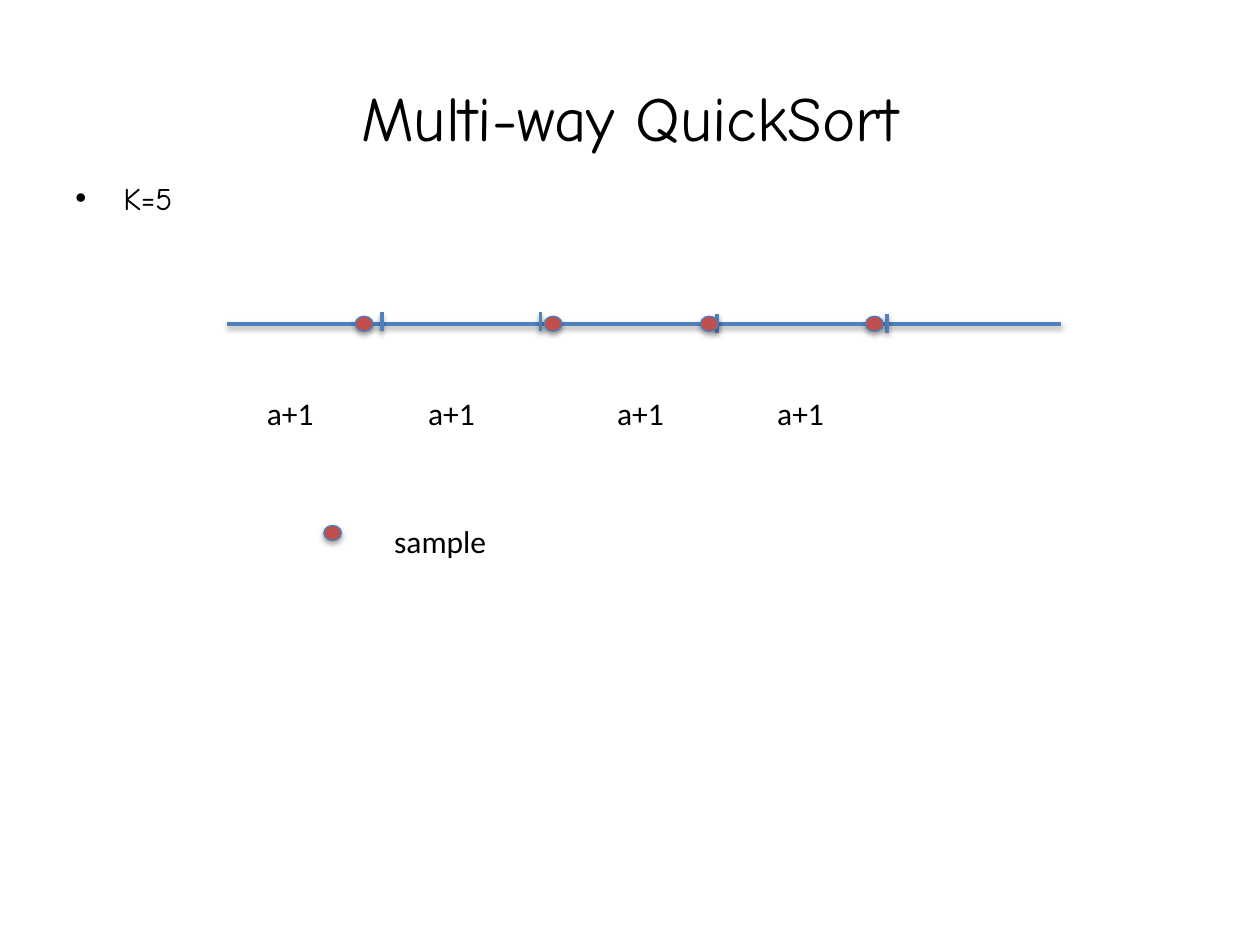
"""Build the Multi-way QuickSort slide: a line split into buckets with sample points."""
import dataclasses

import lxml.etree
import pptx
import pptx.dml.color
import pptx.enum.shapes
import pptx.enum.text
import pptx.oxml.ns
import pptx.util

Inches = pptx.util.Inches
Pt = pptx.util.Pt
qn = pptx.oxml.ns.qn

COLORS = {"text": "000000", "line": "4F81BD", "sample": "C0504D", "outline": "4B7EBC"}
HEADING_FONT = "Comic Neue"
LABEL_FONT = "Calibri"
AXIS_TOP = 2.57
AXIS_LEFT, AXIS_RIGHT = 1.8, 8.42
TICK_HEIGHT = 0.15
SAMPLE_WIDTH, SAMPLE_HEIGHT = 0.14, 0.12
LABEL_STOPS = (0.22, 1.5, 3.0, 4.27)


@dataclasses.dataclass(frozen=True)
class Splitter:
    sample_left: float
    tick_left: float
    tick_top: float


SPLITTERS = (
    Splitter(2.82, 3.03, 2.48),
    Splitter(4.32, 4.29, 2.48),
    Splitter(5.56, 5.69, 2.49),
    Splitter(6.87, 7.04, 2.49),
)


def rgb(name: str) -> pptx.dml.color.RGBColor:
    return pptx.dml.color.RGBColor.from_string(COLORS[name])


def add_shadow(shape, distance: float, opacity: int) -> None:
    effects = lxml.etree.SubElement(shape._element.spPr, qn("a:effectLst"))
    shadow = lxml.etree.SubElement(
        effects, qn("a:outerShdw"), blurRad=str(Pt(3.1)), dist=str(Pt(distance)),
        dir="5400000", rotWithShape="0")
    color = lxml.etree.SubElement(shadow, qn("a:srgbClr"), val=COLORS["text"])
    lxml.etree.SubElement(color, qn("a:alpha"), val=str(opacity * 1000))


def add_line(page, left: float, top: float, right: float, bottom: float) -> None:
    line = page.shapes.add_connector(
        pptx.enum.shapes.MSO_CONNECTOR.STRAIGHT,
        Inches(left), Inches(top), Inches(right), Inches(bottom))
    line.line.color.rgb = rgb("line")
    line.line.width = Pt(2)
    add_shadow(line, 1.6, 38)


def add_sample(page, left: float, top: float) -> None:
    dot = page.shapes.add_shape(
        pptx.enum.shapes.MSO_SHAPE.OVAL, Inches(left), Inches(top),
        Inches(SAMPLE_WIDTH), Inches(SAMPLE_HEIGHT))
    dot.fill.solid()
    dot.fill.fore_color.rgb = rgb("sample")
    dot.line.color.rgb = rgb("outline")
    dot.line.width = Pt(0.75)
    add_shadow(dot, 1.8, 35)


def place(box, left: float, top: float, width: float, height: float) -> None:
    box.left, box.top = Inches(left), Inches(top)
    box.width, box.height = Inches(width), Inches(height)


def write_text(box, text: str, *, font: str = LABEL_FONT, size: float = 18,
               align=pptx.enum.text.PP_ALIGN.LEFT,
               anchor=pptx.enum.text.MSO_ANCHOR.TOP):
    frame = box.text_frame
    frame.word_wrap = True
    frame.vertical_anchor = anchor
    para = frame.paragraphs[0]
    para.alignment = align
    span = para.add_run()
    span.text = text
    span.font.name = font
    span.font.size = Pt(size)
    span.font.color.rgb = rgb("text")
    return para


def add_text(page, left: float, top: float, width: float, height: float,
             text: str, **style):
    box = page.shapes.add_textbox(0, 0, 0, 0)
    place(box, left, top, width, height)
    return write_text(box, text, **style)


def add_bullet(para, indent: float) -> None:
    para.space_before = Pt(3.6)
    properties = para._p.get_or_add_pPr()
    properties.set("marL", str(Inches(indent)))
    properties.set("indent", str(-Inches(indent)))
    lxml.etree.SubElement(properties, qn("a:buFont"), typeface="Arial")
    lxml.etree.SubElement(properties, qn("a:buChar"), char="•")


def add_tab_stops(para, stops: tuple[float, ...]) -> None:
    tabs = lxml.etree.SubElement(para._p.get_or_add_pPr(), qn("a:tabLst"))
    for stop in stops:
        lxml.etree.SubElement(tabs, qn("a:tab"), pos=str(Inches(stop)), algn="l")


def main() -> None:
    deck = pptx.Presentation()
    deck.slide_width, deck.slide_height = Inches(10), Inches(7.5)
    page = deck.slides.add_slide(deck.slide_layouts.get_by_name("Title Only"))

    title = page.shapes.title
    place(title, 0.5, 0.3, 9, 1.25)
    write_text(title, "Multi-way QuickSort", font=HEADING_FONT, size=36,
               align=pptx.enum.text.PP_ALIGN.CENTER,
               anchor=pptx.enum.text.MSO_ANCHOR.MIDDLE)
    add_bullet(add_text(page, 0.5, 1.37, 9.32, 5.88, "K=5", font=HEADING_FONT), 0.38)

    add_line(page, AXIS_LEFT, AXIS_TOP, AXIS_RIGHT, AXIS_TOP)
    for splitter in SPLITTERS:
        add_line(page, splitter.tick_left, splitter.tick_top,
                 splitter.tick_left, splitter.tick_top + TICK_HEIGHT)
    for splitter in SPLITTERS:
        add_sample(page, splitter.sample_left, AXIS_TOP - SAMPLE_HEIGHT / 2)

    labels = "".join("\ta+1" for _ in LABEL_STOPS)
    add_tab_stops(add_text(page, AXIS_LEFT, 3.08, 6.63, 0.4, labels), LABEL_STOPS)

    add_sample(page, 2.57, 4.17)
    add_text(page, 3.03, 4.09, 2.66, 0.4, "sample")
    deck.save("out.pptx")


if __name__ == "__main__":
    main()
